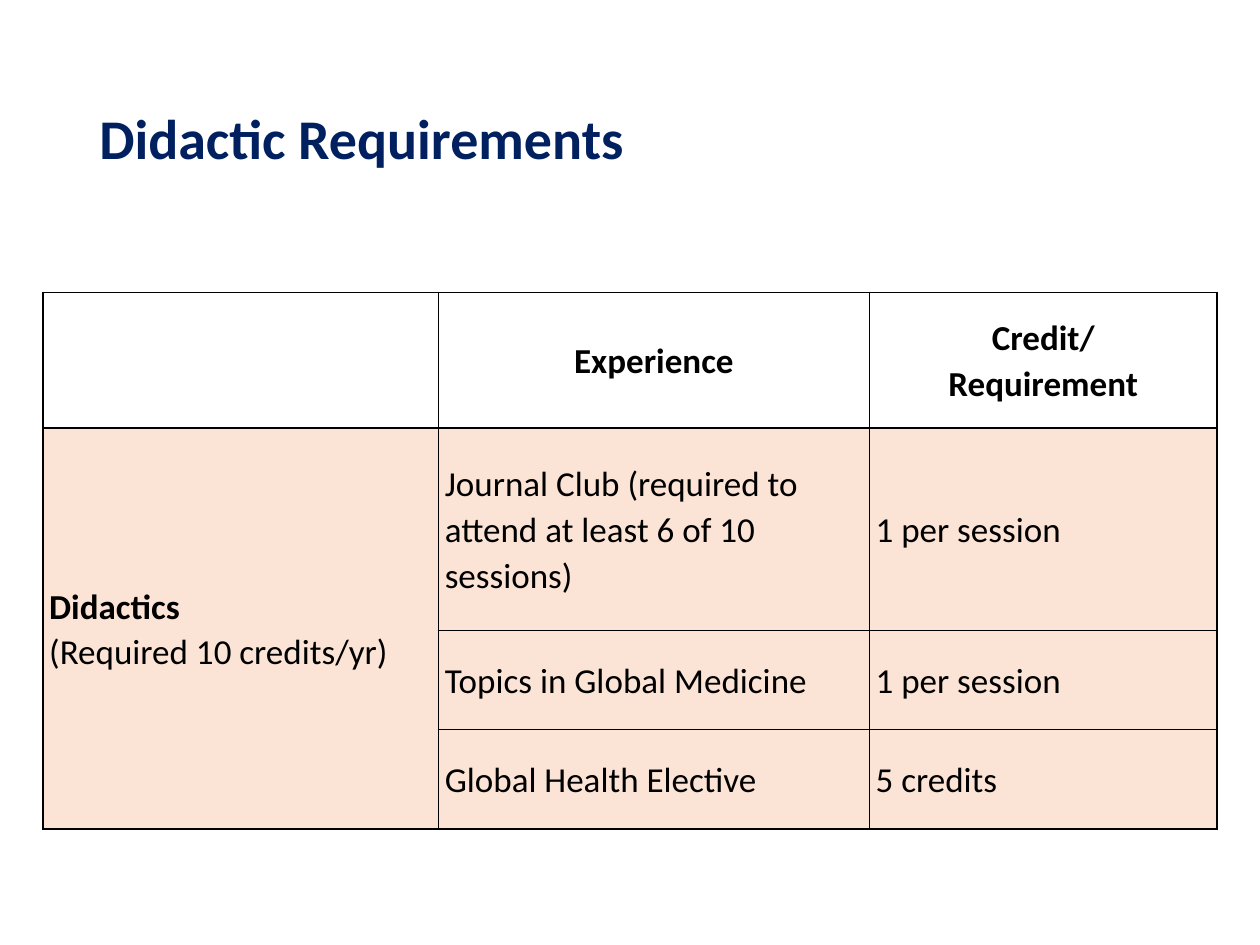
from lxml import etree
from pptx import Presentation
from pptx.dml.color import RGBColor
from pptx.enum import text
from pptx.oxml import ns
from pptx.util import Inches, Pt

NAVY = RGBColor(0x00, 0x20, 0x60)
BLACK = RGBColor(0x00, 0x00, 0x00)
PEACH = RGBColor(0xFB, 0xE4, 0xD5)
FONT = "Calibri"

COLUMN_WIDTHS = (3.14, 3.42, 2.76)
ROW_HEIGHTS = (1.08, 1.61, 0.79, 0.79)
ROWS = (
    ("", "Experience", "Credit/\nRequirement"),
    (
        "Didactics\n(Required 10 credits/yr)",
        "Journal Club (required to attend at least 6 of 10 sessions)",
        "1 per session",
    ),
    ("", "Topics in Global Medicine", "1 per session"),
    ("", "Global Health Elective", "5 credits"),
)


def style_paragraph(para, size, color, bold, spacing):
    para.line_spacing = spacing
    for span in para.runs:
        span.font.name = FONT
        span.font.size = Pt(size)
        span.font.bold = bold
        span.font.color.rgb = color


def add_title(page, left, top, width, height):
    box = page.shapes.add_textbox(left, top, width, height)
    frame = box.text_frame
    frame.word_wrap = True
    frame.vertical_anchor = text.MSO_ANCHOR.MIDDLE
    frame.text = "Didactic Requirements"
    style_paragraph(frame.paragraphs[0], 32, NAVY, True, 0.9)


def add_borders(cell):
    properties = cell._tc.get_or_add_tcPr()
    for side in ("a:lnL", "a:lnR", "a:lnT", "a:lnB"):
        line = etree.SubElement(properties, ns.qn(side), w=str(Pt(1)))
        fill = etree.SubElement(line, ns.qn("a:solidFill"))
        etree.SubElement(fill, ns.qn("a:srgbClr"), val=str(BLACK))


def fill_cell(cell, wording, is_header):
    cell.margin_left = cell.margin_right = Inches(0.05)
    cell.margin_top = cell.margin_bottom = 0
    cell.vertical_anchor = text.MSO_ANCHOR.MIDDLE
    add_borders(cell)
    if is_header:
        cell.fill.background()
    else:
        cell.fill.solid()
        cell.fill.fore_color.rgb = PEACH
    cell.text_frame.text = wording
    for para in cell.text_frame.paragraphs:
        bold = is_header or para.text == "Didactics"
        style_paragraph(para, 20, BLACK, bold, 1.07)
        para.alignment = text.PP_ALIGN.CENTER if is_header else text.PP_ALIGN.LEFT


def add_requirements(page, left, top, width, height):
    frame = page.shapes.add_table(
        len(ROWS), len(COLUMN_WIDTHS), left, top, width, height
    )
    table = frame.table
    table.first_row = False
    table.horz_banding = False
    for column, share in zip(table.columns, COLUMN_WIDTHS):
        column.width = int(width * share / sum(COLUMN_WIDTHS))
    for row, share in zip(table.rows, ROW_HEIGHTS):
        row.height = int(height * share / sum(ROW_HEIGHTS))
    for row_index, row in enumerate(ROWS):
        for column_index, wording in enumerate(row):
            fill_cell(table.cell(row_index, column_index), wording, row_index == 0)
    table.cell(1, 0).merge(table.cell(len(ROWS) - 1, 0))


def main():
    deck = Presentation()
    deck.slide_width = Inches(10)
    deck.slide_height = Inches(7.5)
    page = deck.slides.add_slide(deck.slide_layouts[6])
    add_title(page, Inches(0.69), Inches(0.4), Inches(8.62), Inches(1.45))
    add_requirements(page, Inches(0.34), Inches(2.32), Inches(9.32), Inches(4.26))
    deck.save("out.pptx")


if __name__ == "__main__":
    main()
